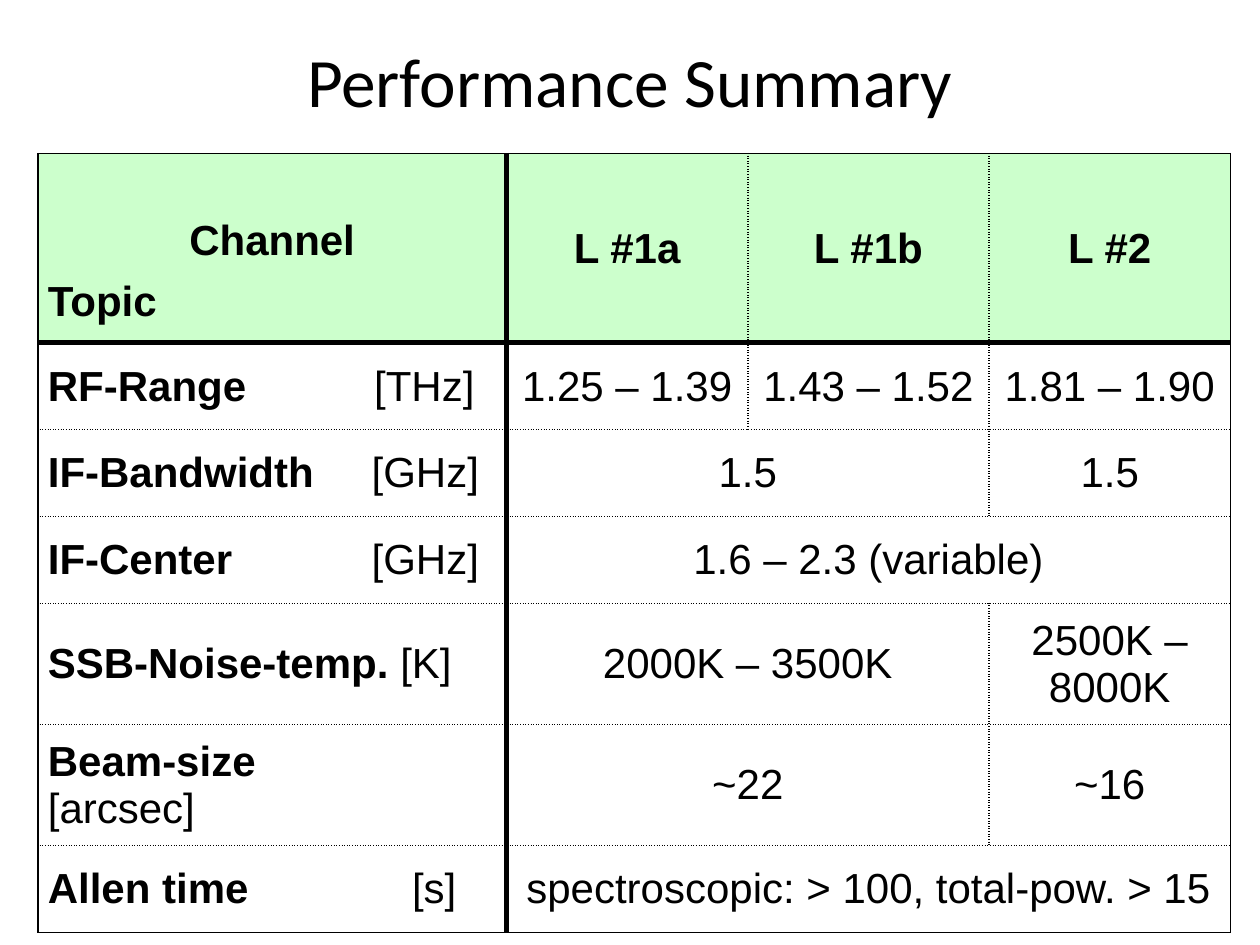
from dataclasses import dataclass

from lxml.etree import SubElement
from pptx import Presentation
from pptx.dml.color import RGBColor
from pptx.enum.text import MSO_ANCHOR, PP_ALIGN
from pptx.oxml.ns import qn
from pptx.util import Inches, Pt


@dataclass(frozen=True)
class Theme:
    ink: str = "000000"
    header_fill: str = "CCFFCC"
    title_font: str = "Calibri"
    table_font: str = "Arial"
    title_size: float = 39.6
    table_size: float = 24
    thin: float = 1
    thick: float = 3


GRID = Inches(0.1)  # the slide is 100 columns by 75 rows
COLUMN_WIDTHS = [37.2, 19.15, 19.15, 19.15]
ROW_HEIGHTS = [15, 6.9, 6.9, 6.9, 9.6, 9.6, 6.9]
CHANNELS = ["L #1a", "L #1b", "L #2"]

# topic, gap, unit, tab stop of the unit, values with the columns they span
TOPICS = [
    ("RF-Range", "\t", "[THz]", 25.9,
     [("1.25 – 1.39", 1), ("1.43 – 1.52", 1), ("1.81 – 1.90", 1)]),
    ("IF-Bandwidth", "\t", "[GHz]", 25.7, [("1.5", 2), ("1.5", 1)]),
    ("IF-Center", "\t", "[GHz]", 25.7, [("1.6 – 2.3 (variable)", 3)]),
    ("SSB-Noise-temp.", " ", "[K]", None,
     [("2000K – 3500K", 2), ("2500K – 8000K", 1)]),
    ("Beam-size", "\v", "[arcsec]", None, [("~22", 2), ("~16", 1)]),
    ("Allen time", "\t", "[s]", 28.9,
     [("spectroscopic: > 100, total-pow. > 15", 3)]),
]


def grid(units):
    return int(units * GRID)


class SlideBuilder:
    def __init__(self, slide, theme):
        self.slide = slide
        self.theme = theme

    def style_run(self, run, font, size, bold=False):
        run.font.name = font
        run.font.size = Pt(size)
        run.font.bold = bold
        run.font.color.rgb = RGBColor.from_string(self.theme.ink)

    def title(self, text, left, top, width, height):
        box = self.slide.shapes.add_textbox(*map(grid, (left, top, width, height)))
        frame = box.text_frame
        frame.word_wrap = True
        frame.margin_top = 0
        frame.text = text
        paragraph = frame.paragraphs[0]
        paragraph.alignment = PP_ALIGN.CENTER
        self.style_run(paragraph.runs[0], self.theme.title_font, self.theme.title_size)

    def table(self, left, top, widths, heights):
        shape = self.slide.shapes.add_table(
            len(heights), len(widths),
            *map(grid, (left, top, sum(widths), sum(heights))))
        table = shape.table
        table.first_row = table.horz_banding = False
        for column, width in zip(table.columns, widths):
            column.width = grid(width)
        for row, height in zip(table.rows, heights):
            row.height = grid(height)
        return table

    def cell(self, table, row, column, span=1):
        """Merge, rule and fill one cell, and return it."""
        cell = table.cell(row, column)
        last = column + span - 1
        if span > 1:
            cell.merge(table.cell(row, last))
        cell.margin_left = cell.margin_right = Inches(0.08)
        cell.margin_top = cell.margin_bottom = Inches(0.05)
        cell.vertical_anchor = MSO_ANCHOR.MIDDLE
        self.border(cell, "a:lnL", column, len(table.columns))
        self.border(cell, "a:lnR", last + 1, len(table.columns))
        self.border(cell, "a:lnT", row, len(table.rows))
        self.border(cell, "a:lnB", row + 1, len(table.rows))
        if row == 0:
            cell.fill.solid()
            cell.fill.fore_color.rgb = RGBColor.from_string(self.theme.header_fill)
        else:
            cell.fill.background()
        return cell

    def border(self, cell, tag, edge, last_edge):
        """Solid outside, thick after the first row or column, dotted elsewhere."""
        width = self.theme.thick if edge == 1 else self.theme.thin
        dash = "solid" if edge in (0, 1, last_edge) else "sysDot"
        line = SubElement(cell._tc.get_or_add_tcPr(), qn(tag), w=str(Pt(width)))
        fill = SubElement(line, qn("a:solidFill"))
        SubElement(fill, qn("a:srgbClr"), val=self.theme.ink)
        SubElement(line, qn("a:prstDash"), val=dash)

    def paragraph(self, paragraph, text, align, bold=False, unit="", tab=None):
        paragraph.text = text
        paragraph.alignment = align
        paragraph.line_spacing = 1.01
        paragraph.space_before = Pt(7.9)
        for run in paragraph.runs:
            self.style_run(run, self.theme.table_font, self.theme.table_size, bold)
        if unit:
            run = paragraph.add_run()
            run.text = unit
            self.style_run(run, self.theme.table_font, self.theme.table_size)
        if tab:
            stops = SubElement(paragraph._p.get_or_add_pPr(), qn("a:tabLst"))
            SubElement(stops, qn("a:tab"), pos=str(grid(tab)), algn="l")


def main():
    presentation = Presentation()
    presentation.slide_width = grid(100)
    presentation.slide_height = grid(75)
    slide = presentation.slides.add_slide(presentation.slide_layouts[6])
    builder = SlideBuilder(slide, Theme())
    builder.title("Performance Summary", 5, 3, 90, 12.5)
    table = builder.table(3, 12.2, COLUMN_WIDTHS, ROW_HEIGHTS)

    corner = builder.cell(table, 0, 0)
    corner.margin_top = Inches(0.42)
    frame = corner.text_frame
    builder.paragraph(frame.paragraphs[0], "Channel", PP_ALIGN.CENTER, bold=True)
    builder.paragraph(frame.add_paragraph(), "Topic", PP_ALIGN.LEFT, bold=True)
    for column, channel in enumerate(CHANNELS, start=1):
        cell = builder.cell(table, 0, column)
        builder.paragraph(cell.text_frame.paragraphs[0], channel,
                          PP_ALIGN.CENTER, bold=True)

    for row, (topic, gap, unit, tab, values) in enumerate(TOPICS, start=1):
        cell = builder.cell(table, row, 0)
        builder.paragraph(cell.text_frame.paragraphs[0], topic + gap,
                          PP_ALIGN.LEFT, bold=True, unit=unit, tab=tab)
        column = 1
        for value, span in values:
            cell = builder.cell(table, row, column, span)
            builder.paragraph(cell.text_frame.paragraphs[0], value, PP_ALIGN.CENTER)
            column += span

    presentation.save("out.pptx")


if __name__ == "__main__":
    main()
